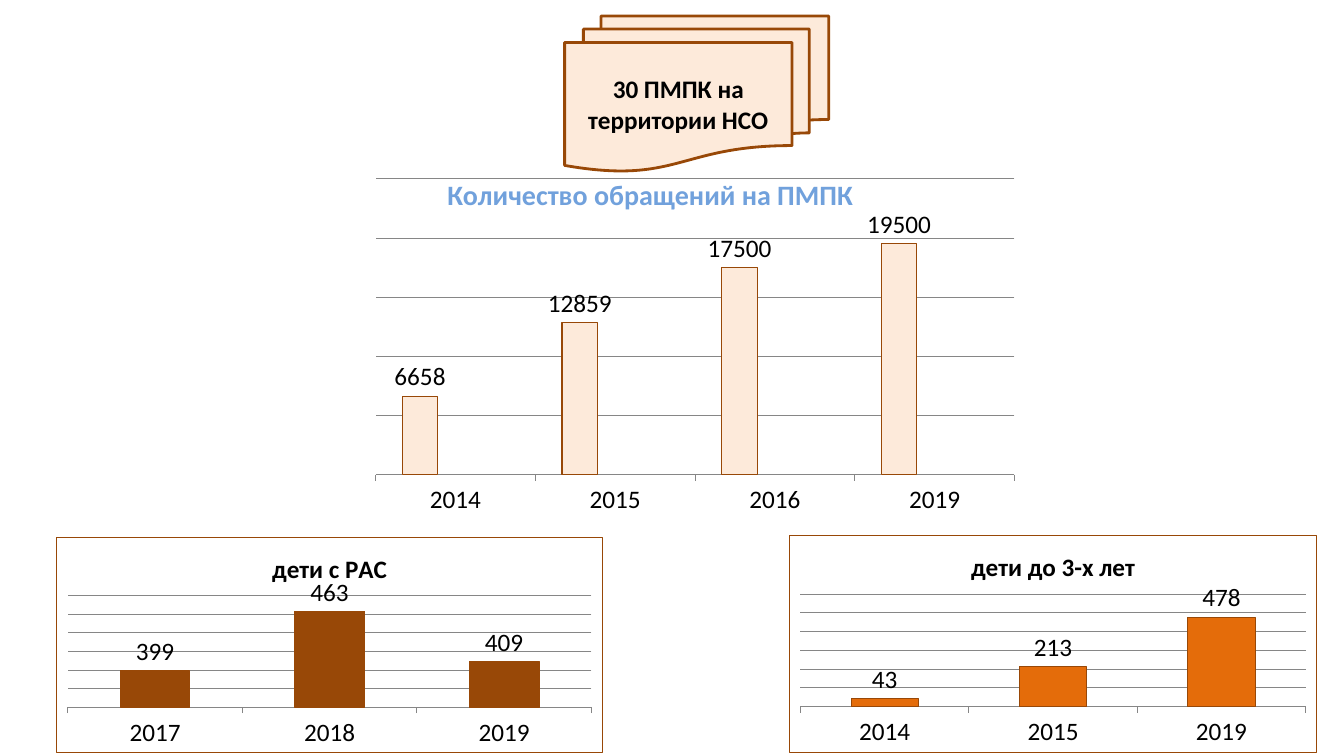
import pptx
import pptx.chart.data
import pptx.dml.color
import pptx.enum.chart
import pptx.enum.shapes
import pptx.enum.text
import pptx.oxml
import pptx.oxml.ns
import pptx.util

PX = 9144  # 100 px to the inch
RGB = pptx.dml.color.RGBColor
BLACK = RGB(0x00, 0x00, 0x00)
GREY = RGB(0x86, 0x86, 0x86)
BLUE = RGB(0x71, 0xA1, 0xDC)
PEACH = RGB(0xFD, 0xEA, 0xDA)
BROWN = RGB(0x98, 0x48, 0x07)
ORANGE = RGB(0xE4, 0x6C, 0x0A)
RED = RGB(0xC0, 0x50, 0x4D)
GREEN = RGB(0x9B, 0xBB, 0x59)
FONT = "Calibri"
HAIRLINE = pptx.util.Pt(0.75)


def write(frame, text, size=18, color=BLACK, align=pptx.enum.text.PP_ALIGN.LEFT):
    paragraph = frame.paragraphs[0]
    paragraph.alignment = align
    run = paragraph.add_run()
    run.text = text
    run.font.name = FONT
    run.font.size = pptx.util.Pt(size)
    run.font.bold = True
    run.font.color.rgb = color


def add_columns(box, years, series, top, step, plot, bottom=0, title=None):
    """Add a column chart; series holds (name, values, colour), plot holds x, y, w, h shares."""
    data = pptx.chart.data.CategoryChartData()
    data.categories = years
    for name, values, _ in series:
        data.add_series(name, values)
    chart = slide.shapes.add_chart(
        pptx.enum.chart.XL_CHART_TYPE.COLUMN_CLUSTERED, *[n * PX for n in box], data
    ).chart
    chart.font.name = FONT
    chart.font.size = pptx.util.Pt(18)
    chart.font.color.rgb = BLACK
    chart.has_legend = False
    chart.has_title = title is not None
    if title:
        write(chart.chart_title.text_frame, title, align=pptx.enum.text.PP_ALIGN.CENTER)
        chart.chart_title.include_in_layout = False

    values_axis = chart.value_axis
    values_axis.minimum_scale = bottom
    values_axis.maximum_scale = top
    values_axis.major_unit = step
    values_axis.has_major_gridlines = True
    values_axis.visible = False
    years_axis = chart.category_axis
    years_axis.major_tick_mark = pptx.enum.chart.XL_TICK_MARK.OUTSIDE
    for line in (values_axis.major_gridlines.format.line, years_axis.format.line):
        line.color.rgb = GREY
        line.width = HAIRLINE

    columns = chart.plots[0]
    columns.gap_width = 150
    columns.vary_by_categories = False
    for column, (_, _, color) in zip(columns.series, series):
        column.format.fill.solid()
        column.format.fill.fore_color.rgb = color
    first = columns.series[0]
    first.format.line.color.rgb = BROWN
    first.format.line.width = HAIRLINE
    first.data_labels.show_value = True
    first.data_labels.position = pptx.enum.chart.XL_LABEL_POSITION.OUTSIDE_END

    namespaces = pptx.oxml.ns.nsdecls("c", "a")
    area = chart._chartSpace.chart.plotArea
    for layout in area.findall(pptx.oxml.ns.qn("c:layout")):
        area.remove(layout)
    shares = "".join(f'<c:{key} val="{n}"/>' for key, n in zip("xywh", plot))
    area.insert(0, pptx.oxml.parse_xml(
        f'<c:layout {namespaces}><c:manualLayout><c:layoutTarget val="inner"/>'
        f'<c:xMode val="edge"/><c:yMode val="edge"/>{shares}</c:manualLayout></c:layout>'
    ))
    border = f'<a:solidFill><a:srgbClr val="{BROWN}"/></a:solidFill>' if title else "<a:noFill/>"
    chart._chartSpace.chart.addnext(pptx.oxml.parse_xml(
        f'<c:spPr {namespaces}><a:noFill/><a:ln w="{HAIRLINE}">{border}</a:ln></c:spPr>'
    ))


deck = pptx.Presentation()
deck.slide_width = 1333 * PX
deck.slide_height = 750 * PX
slide = deck.slides.add_slide(deck.slide_layouts[6])

heading = slide.shapes.add_textbox(434 * PX, 171 * PX, 486 * PX, 31 * PX).text_frame
heading.word_wrap = False
write(heading, "Количество обращений на ПМПК", size=20, color=BLUE)

add_columns(
    (172, 93, 1056, 445), ["2014", "2015", "2016", "2019"],
    [("Series 1", [6658, 12859, 17500, 19500], PEACH),
     ("Series 2", [None] * 4, RED),
     ("Series 3", [None] * 4, GREEN)],
    top=25000, step=5000, plot=(0.19, 0.19, 0.6, 0.66),
)

commissions = slide.shapes.add_shape(
    pptx.enum.shapes.MSO_SHAPE.FLOWCHART_MULTIDOCUMENT, 560 * PX, 16 * PX, 262 * PX, 154 * PX
)
commissions.shadow.inherit = False
commissions.fill.solid()
commissions.fill.fore_color.rgb = PEACH
commissions.line.color.rgb = BROWN
commissions.line.width = pptx.util.Pt(2)
commissions.text_frame.word_wrap = True
commissions.text_frame.vertical_anchor = pptx.enum.text.MSO_ANCHOR.MIDDLE
write(commissions.text_frame, "30 ПМПК на территории НСО", align=pptx.enum.text.PP_ALIGN.CENTER)

for box, title, years, counts, color, bottom, top, step in [
    ((783, 531, 523, 216), "дети до 3-х лет", ["2014", "2015", "2019"],
     [43, 213, 478], ORANGE, 0, 600, 100),
    ((56, 533, 542, 214), "дети с РАС", ["2017", "2018", "2019"],
     [399, 463, 409], BROWN, 360, 480, 20),
]:
    add_columns(box, years, [(title, counts, color)], top, step,
                plot=(0.02, 0.27, 0.96, 0.52), bottom=bottom, title=title)

deck.save("out.pptx")
